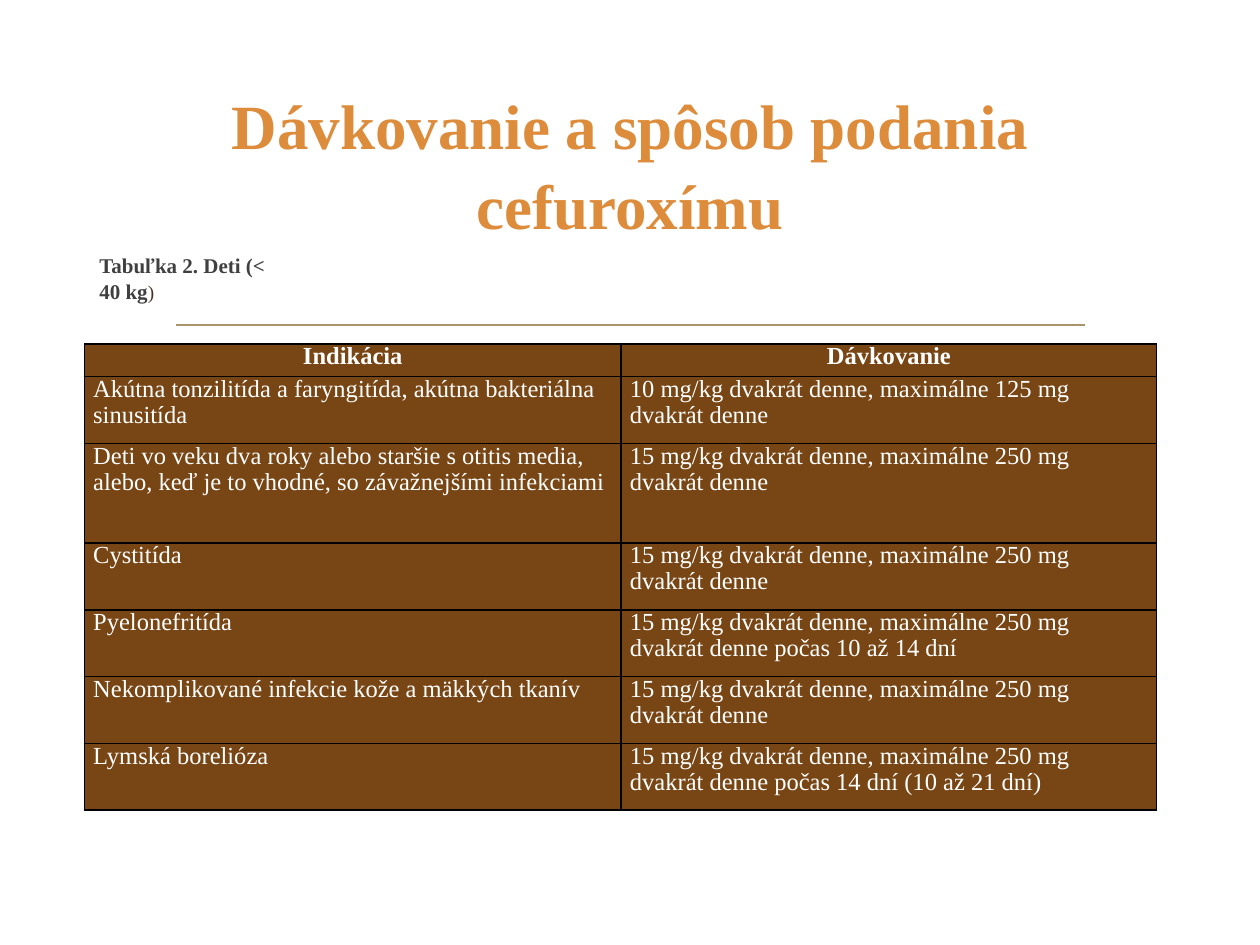
from dataclasses import dataclass

from lxml.etree import SubElement
from pptx import Presentation
from pptx.dml.color import RGBColor as RGB
from pptx.enum.shapes import MSO_CONNECTOR as CONN
from pptx.enum.text import MSO_ANCHOR as ANCHOR, PP_ALIGN as ALIGN
from pptx.oxml.ns import qn
from pptx.util import Inches, Pt


@dataclass(frozen=True)
class Theme:
    font: str = "Times New Roman"
    title: str = "DD8C3C"
    caption: str = "404040"
    bracket: str = "473426"
    rule: str = "AB946B"
    cell: str = "784615"
    cell_text: str = "FFFFFF"
    border: str = "000000"
    title_pt: int = 36
    table_pt: int = 14
    caption_pt: int = 12
    bracket_pt: int = 11
    rule_pt: float = 1.25
    border_pt: int = 1


THEME = Theme()

HEADER = ("Indikácia", "Dávkovanie")
DOSE_250 = "15 mg/kg dvakrát denne, maximálne 250 mg dvakrát denne"
DOSES = [
    ("Akútna tonzilitída a faryngitída, akútna bakteriálna sinusitída",
     "10 mg/kg dvakrát denne, maximálne 125 mg dvakrát denne"),
    ("Deti vo veku dva roky alebo staršie s otitis media, "
     "alebo, keď je to vhodné, so závažnejšími infekciami", DOSE_250),
    ("Cystitída", DOSE_250),
    ("Pyelonefritída", DOSE_250 + " počas 10 až 14 dní"),
    ("Nekomplikované infekcie kože a mäkkých tkanív", DOSE_250),
    ("Lymská borelióza", DOSE_250 + " počas 14 dní (10 až 21 dní)"),
]
COL_WIDTHS = (4.26, 4.25)
ROW_HEIGHTS = (0.26, 0.53, 0.79, 0.53, 0.53, 0.53, 0.53)


def style_run(r, size, color, bold=False):
    r.font.name = THEME.font
    r.font.size = Pt(size)
    r.font.bold = bold
    r.font.color.rgb = RGB.from_string(color)


def add_text(s, box, runs, anchor, align=ALIGN.LEFT, spacing=1.0):
    """Add a wrapped text box; runs are (text, size, color, bold)."""
    sp = s.shapes.add_textbox(*map(Inches, box))
    tf = sp.text_frame
    tf.word_wrap = True
    tf.vertical_anchor = anchor
    p = tf.paragraphs[0]
    p.alignment = align
    p.line_spacing = spacing
    for text, size, color, bold in runs:
        r = p.add_run()
        r.text = text
        style_run(r, size, color, bold)
    return tf


def add_rule(s, x1, x2, y):
    line = s.shapes.add_connector(
        CONN.STRAIGHT, Inches(x1), Inches(y), Inches(x2), Inches(y))
    line.line.color.rgb = RGB.from_string(THEME.rule)
    line.line.width = Pt(THEME.rule_pt)
    SubElement(line._element.spPr, qn("a:effectLst"))


def set_borders(cell):
    tc_pr = cell._tc.get_or_add_tcPr()
    for i, side in enumerate(("lnL", "lnR", "lnT", "lnB")):
        ln = tc_pr.makeelement(qn(f"a:{side}"), {"w": str(Pt(THEME.border_pt))})
        fill = SubElement(ln, qn("a:solidFill"))
        SubElement(fill, qn("a:srgbClr"), val=THEME.border)
        tc_pr.insert(i, ln)  # borders come before the fill


def fill_cell(cell, text, is_header):
    cell.fill.solid()
    cell.fill.fore_color.rgb = RGB.from_string(THEME.cell)
    cell.margin_left = cell.margin_right = Inches(0.07)
    cell.margin_top = cell.margin_bottom = 0
    set_borders(cell)
    p = cell.text_frame.paragraphs[0]
    p.text = text
    p.alignment = ALIGN.CENTER if is_header else ALIGN.LEFT
    p.line_spacing = 0.96
    style_run(p.runs[0], THEME.table_pt, THEME.cell_text, is_header)


def add_dose_table(s, left, top):
    rows = [HEADER, *DOSES]
    table = s.shapes.add_table(
        len(rows), len(HEADER), Inches(left), Inches(top),
        Inches(sum(COL_WIDTHS)), Inches(sum(ROW_HEIGHTS))).table
    table.horz_banding = False
    for col, width in zip(table.columns, COL_WIDTHS):
        col.width = Inches(width)
    for i, (row, height) in enumerate(zip(table.rows, ROW_HEIGHTS)):
        row.height = Inches(height)
        for cell, text in zip(row.cells, rows[i]):
            fill_cell(cell, text, i == 0)


def main():
    prs = Presentation()
    prs.slide_width, prs.slide_height = Inches(10), Inches(7.5)
    s = prs.slides.add_slide(prs.slide_layouts[6])

    # Divider above the table
    add_rule(s, 1.4, 8.61, 2.58)

    # Title
    add_text(s, (0.8, 0.54, 8.4, 1.5),
             [("Dávkovanie a spôsob podania cefuroxímu",
               THEME.title_pt, THEME.title, True)],
             ANCHOR.MIDDLE, ALIGN.CENTER, 1.05)

    # Dosing table
    add_dose_table(s, 0.67, 2.73)

    # Table caption, kept narrow so that the weight goes on its own line
    tf = add_text(s, (0.69, 2, 1.98, 0.49),
                  [("Tabuľka 2. Deti (< 40 kg", THEME.caption_pt, THEME.caption, True),
                   (")", THEME.bracket_pt, THEME.bracket, False)],
                  ANCHOR.TOP, spacing=1.03)
    tf.margin_top = 0
    tf.margin_right = Inches(0.4)

    prs.save("out.pptx")


if __name__ == "__main__":
    main()
